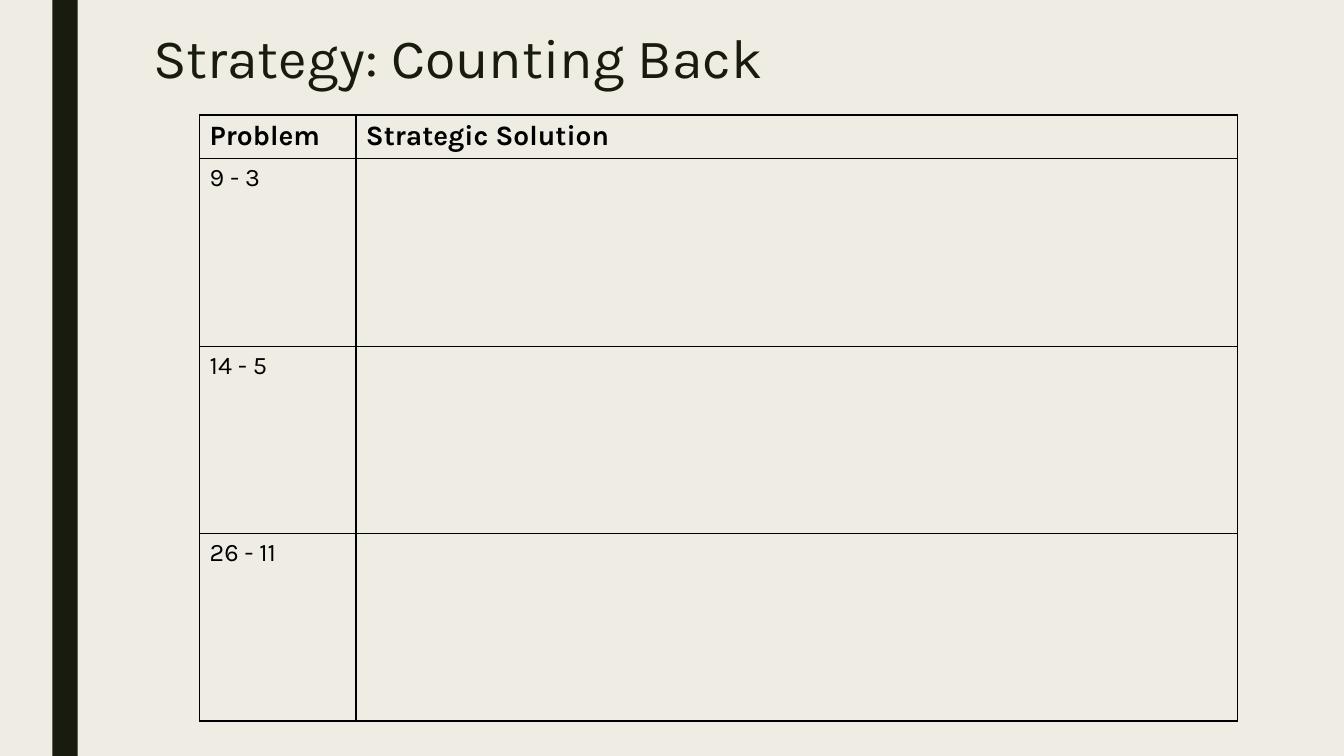
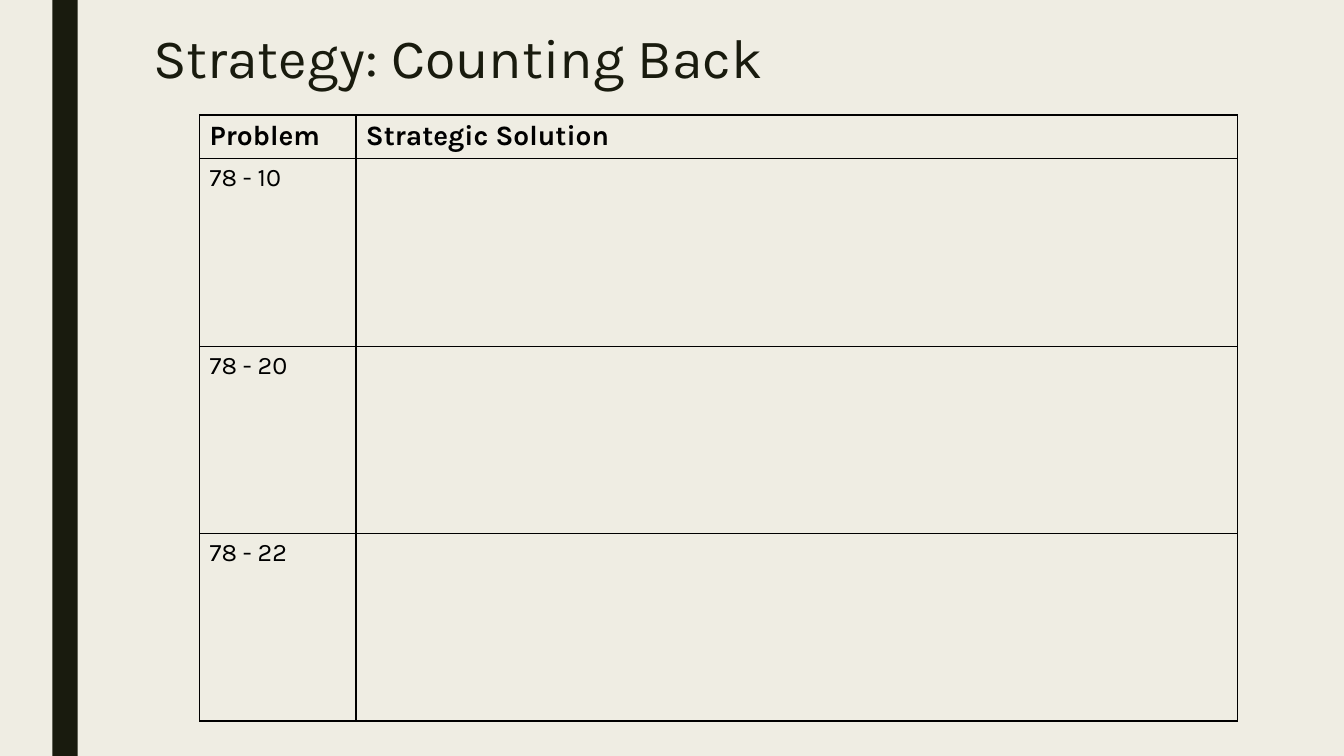
import pptx
import pptx.util
import pptx.dml.color
import pptx.enum.shapes
import pptx.enum.text
import pptx.oxml

INK, PAPER, BLACK = "191B0E", "EFEDE3", "000000"
FONT = "Karla"
TITLE = "Strategy: Counting Back"
HEADS = ["Problem", "Strategic Solution"]
SETS = [
    ["9 - 3", "14 - 5", "26 - 11"],
    ["78 - 10", "78 - 20", "78 - 22"],
]
COLS = [1.55, 8.74]
HEAD, ROW = 0.43, 1.86
NS = "http://schemas.openxmlformats.org/drawingml/2006/main"
inch = pptx.util.Inches


def tint(code):
    return pptx.dml.color.RGBColor.from_string(code)


def write(frame, text, size=18, color=BLACK, bold=False, space=1.0):
    para = frame.paragraphs[0]
    para.line_spacing = space
    run = para.add_run()
    run.text = text
    run.font.name = FONT
    run.font.size = pptx.util.Pt(size)
    run.font.bold = bold
    run.font.color.rgb = tint(color)


deck = pptx.Presentation()
deck.slide_width, deck.slide_height = inch(13.33), inch(7.5)
back = deck.slide_master.background.fill
back.solid()
back.fore_color.rgb = tint(PAPER)

for sums in SETS:
    slide = deck.slides.add_slide(deck.slide_layouts[6])

    band = slide.shapes.add_shape(
        pptx.enum.shapes.MSO_SHAPE.RECTANGLE,
        inch(0.52), 0, inch(0.25), deck.slide_height)
    band.shadow.inherit = False
    band.fill.solid()
    band.fill.fore_color.rgb = tint(INK)
    band.line.fill.background()

    title = slide.shapes.add_textbox(inch(1.42), inch(0.23), inch(10.5), inch(0.75))
    title.text_frame.word_wrap = True
    title.text_frame.vertical_anchor = pptx.enum.text.MSO_ANCHOR.MIDDLE
    write(title.text_frame, TITLE, size=39.6, color=INK, space=0.89)

    rows = [HEADS] + [[task, ""] for task in sums]
    highs = [HEAD] + [ROW] * len(sums)
    grid = slide.shapes.add_table(
        len(rows), len(COLS), inch(1.98), inch(1.14),
        inch(sum(COLS)), inch(sum(highs))).table
    grid.first_row = grid.horz_banding = False
    for col, wide in zip(grid.columns, COLS):
        col.width = inch(wide)
    for r, (texts, high) in enumerate(zip(rows, highs)):
        grid.rows[r].height = inch(high)
        for c, text in enumerate(texts):
            cell = grid.cell(r, c)
            if text:
                write(cell.text_frame, text, size=18 if r else 20, bold=r == 0)
            props = cell._tc.get_or_add_tcPr()
            for side in ("lnL", "lnR", "lnT", "lnB"):
                props.append(pptx.oxml.parse_xml(
                    f'<a:{side} xmlns:a="{NS}" w="12700"><a:solidFill>'
                    f'<a:srgbClr val="{BLACK}"/></a:solidFill></a:{side}>'))
            cell.fill.background()

deck.save("out.pptx")
